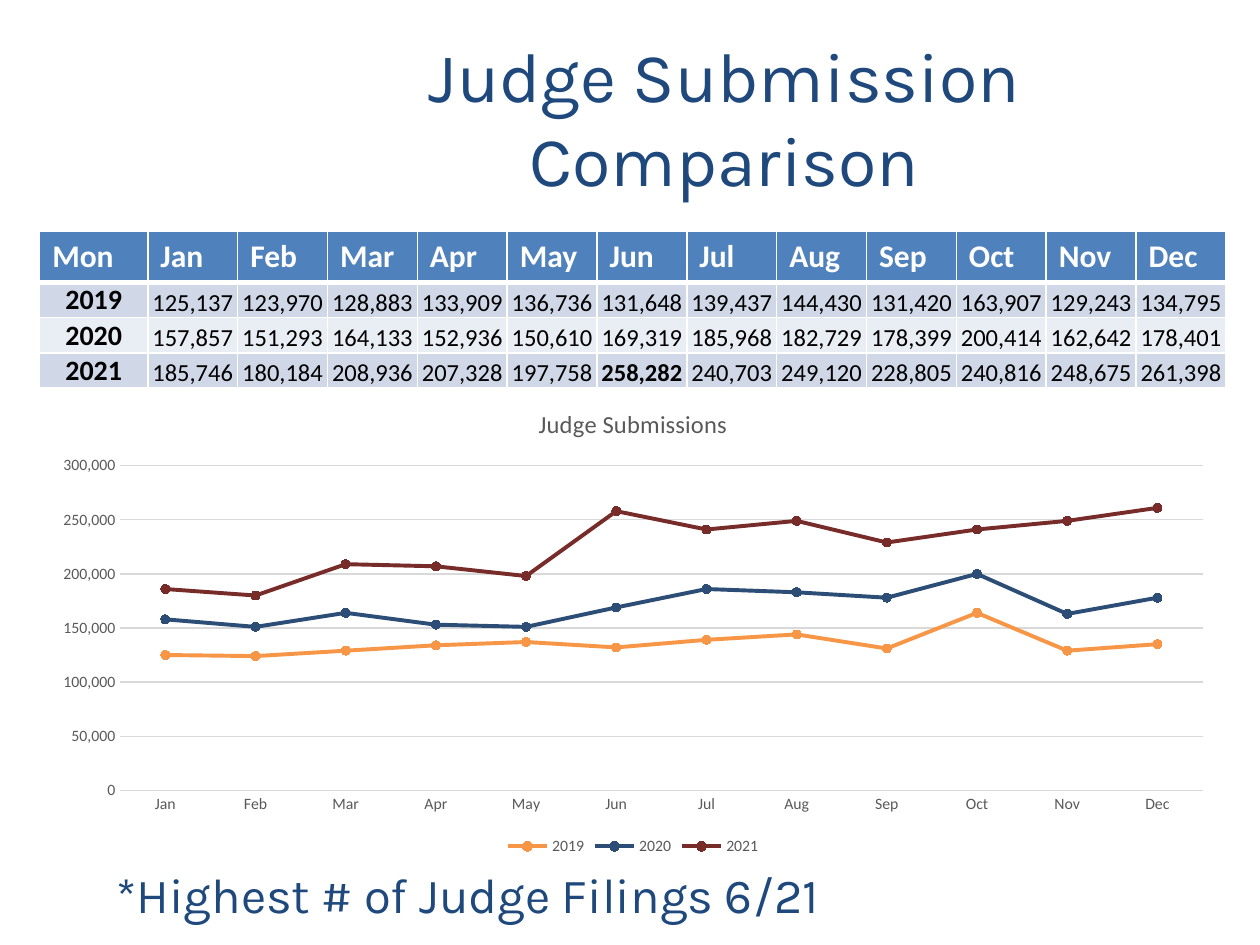
from lxml import etree
from pptx import Presentation
from pptx.chart.data import CategoryChartData
from pptx.dml.color import RGBColor
from pptx.enum.chart import XL_CHART_TYPE, XL_LEGEND_POSITION, XL_MARKER_STYLE, XL_TICK_MARK
from pptx.enum.text import MSO_ANCHOR, MSO_AUTO_SIZE, PP_ALIGN
from pptx.oxml.ns import qn
from pptx.util import Cm, Pt

LINE_MARKERS = XL_CHART_TYPE.LINE_MARKERS
LEGEND_BOTTOM = XL_LEGEND_POSITION.BOTTOM
CIRCLE = XL_MARKER_STYLE.CIRCLE
NO_TICK = XL_TICK_MARK.NONE
MIDDLE, BOTTOM = MSO_ANCHOR.MIDDLE, MSO_ANCHOR.BOTTOM
NO_FIT = MSO_AUTO_SIZE.NONE
CENTER = PP_ALIGN.CENTER

NAVY, GREY, RULE, WHITE, BLACK = "1F497D", "595959", "D9D9D9", "FFFFFF", "000000"
HEADER_FILL, BAND_FILLS = "4F81BD", ("D0D8E8", "E9EDF4")
MONTHS = "Jan Feb Mar Apr May Jun Jul Aug Sep Oct Nov Dec".split()
SUBMISSIONS = {
    "2019": (125137, 123970, 128883, 133909, 136736, 131648,
             139437, 144430, 131420, 163907, 129243, 134795),
    "2020": (157857, 151293, 164133, 152936, 150610, 169319,
             185968, 182729, 178399, 200414, 162642, 178401),
    "2021": (185746, 180184, 208936, 207328, 197758, 258282,
             240703, 249120, 228805, 240816, 248675, 261398),
}
SERIES_COLORS = ("F79646", "2C4D75", "772C2A")
HIGHLIGHT = ("2021", "Jun")


def rgb(value):
    """Turn a hex string into a colour."""
    return RGBColor.from_string(value)


def style_font(font, size, color, name="Calibri", bold=False):
    """Set size, colour, typeface and weight of a font."""
    font.size, font.name, font.bold = Pt(size), name, bold
    font.color.rgb = rgb(color)


def add_run(p, text, *style, **options):
    """Add one styled run to a paragraph."""
    r = p.add_run()
    r.text = text
    style_font(r.font, *style, **options)


def fill_heading(sp, box, text, size):
    """Place a shape in a box and write a centred heading in it."""
    sp.left, sp.top, sp.width, sp.height = map(Cm, box)
    tf = sp.text_frame
    tf.word_wrap, tf.auto_size, tf.vertical_anchor = True, NO_FIT, MIDDLE
    tf.margin_left = tf.margin_right = tf.margin_top = tf.margin_bottom = Cm(0.05)
    p = tf.paragraphs[0]
    p.alignment = CENTER
    add_run(p, text, size, NAVY, name="Karla")


def set_borders(cell, bottom):
    """Draw white borders around a cell, with the given bottom width in points."""
    tc_pr = cell._tc.get_or_add_tcPr()
    for side, width in (("L", 1), ("R", 1), ("T", 1), ("B", bottom)):
        ln = etree.SubElement(tc_pr, qn(f"a:ln{side}"), w=str(Pt(width)))
        fill = etree.SubElement(ln, qn("a:solidFill"))
        etree.SubElement(fill, qn("a:srgbClr"), val=WHITE)


def paint_cell(cell, fill, bottom=1):
    """Give a cell its borders and fill."""
    set_borders(cell, bottom)
    cell.fill.solid()
    cell.fill.fore_color.rgb = rgb(fill)


def fill_data_cell(cell, text, size, fill, bold):
    """Write a centred entry at the bottom of a tight cell."""
    paint_cell(cell, fill)
    cell.vertical_anchor = BOTTOM
    cell.margin_left = cell.margin_right = cell.margin_top = Cm(0.02)
    cell.margin_bottom = 0
    p = cell.text_frame.paragraphs[0]
    p.alignment = CENTER
    add_run(p, text, size, BLACK, bold=bold)


def add_submission_table(s, box):
    """Add the table of monthly submissions by year."""
    left, top, width, height = box
    table = s.shapes.add_table(len(SUBMISSIONS) + 1, len(MONTHS) + 1,
                               Cm(left), Cm(top), Cm(width), Cm(height)).table
    year_width = 2.18
    month_width = (width - year_width) / len(MONTHS)
    for i, column in enumerate(table.columns):
        column.width = Cm(month_width if i else year_width)
    for row, row_height in zip(table.rows, (0.91, 0.64, 0.64, 0.53)):
        row.height = Cm(row_height)
    for i, label in enumerate(["Mon"] + MONTHS):
        cell = table.cell(0, i)
        paint_cell(cell, HEADER_FILL, bottom=3)
        add_run(cell.text_frame.paragraphs[0], label, 18, WHITE, bold=True)
    for i, (year, values) in enumerate(SUBMISSIONS.items(), 1):
        fill = BAND_FILLS[(i - 1) % 2]
        fill_data_cell(table.cell(i, 0), year, 16, fill, True)
        for j, (month, value) in enumerate(zip(MONTHS, values), 1):
            fill_data_cell(table.cell(i, j), f"{value:,}", 14, fill,
                           (year, month) == HIGHLIGHT)


def style_axes(chart):
    """Format both axes and the gridlines."""
    for axis in (chart.category_axis, chart.value_axis):
        axis.major_tick_mark = axis.minor_tick_mark = NO_TICK
        style_font(axis.tick_labels.font, 9, GREY)
    values = chart.value_axis
    values.minimum_scale, values.maximum_scale, values.major_unit = 0, 300000, 50000
    values.tick_labels.number_format = "#,##0"
    values.tick_labels.number_format_is_linked = False
    values.format.line.fill.background()
    for line in (chart.category_axis.format.line, values.major_gridlines.format.line):
        line.color.rgb = rgb(RULE)
        line.width = Pt(0.75)


def style_series(series, color):
    """Format a line and its round markers in one colour."""
    series.smooth = False
    series.format.line.color.rgb = rgb(color)
    series.format.line.width = Pt(2.25)
    marker = series.marker
    marker.style, marker.size = CIRCLE, 5
    marker.format.fill.solid()
    marker.format.fill.fore_color.rgb = rgb(color)
    marker.format.line.color.rgb = rgb(color)


def add_submission_chart(s, box):
    """Add the line chart of submissions in whole thousands, one line for each year."""
    data = CategoryChartData(number_format="#,##0")
    data.categories = MONTHS
    for year, values in SUBMISSIONS.items():
        data.add_series(year, [round(value, -3) for value in values])
    chart = s.shapes.add_chart(LINE_MARKERS, *map(Cm, box), data).chart
    style_font(chart.font, 10, BLACK)
    chart.has_title = True
    add_run(chart.chart_title.text_frame.paragraphs[0], "Judge Submissions", 14, GREY)
    chart.chart_title.include_in_layout = False
    chart.has_legend = True
    chart.legend.position = LEGEND_BOTTOM
    chart.legend.include_in_layout = False
    style_font(chart.legend.font, 9, GREY)
    style_axes(chart)
    plot = chart.plots[0]
    plot.vary_by_categories = False
    for series, color in zip(plot.series, SERIES_COLORS):
        style_series(series, color)


def main():
    """Build the slide and save it."""
    prs = Presentation()
    prs.slide_width, prs.slide_height = Cm(25.4), Cm(19.05)
    s = prs.slides.add_slide(prs.slide_layouts[5])
    fill_heading(s.shapes.title, (5.08, 0.76, 19.05, 3.18),
                 "Judge Submission Comparison", 40)
    add_submission_table(s, (0.8, 4.66, 23.92, 3.12))
    note_box = (0.85, 17.48, 17.15, 1.07)
    fill_heading(s.shapes.add_textbox(*map(Cm, note_box)), note_box,
                 "*Highest # of Judge Filings 6/21", 28)
    add_submission_chart(s, (0.8, 7.78, 23.92, 9.57))
    prs.save("out.pptx")


if __name__ == "__main__":
    main()
